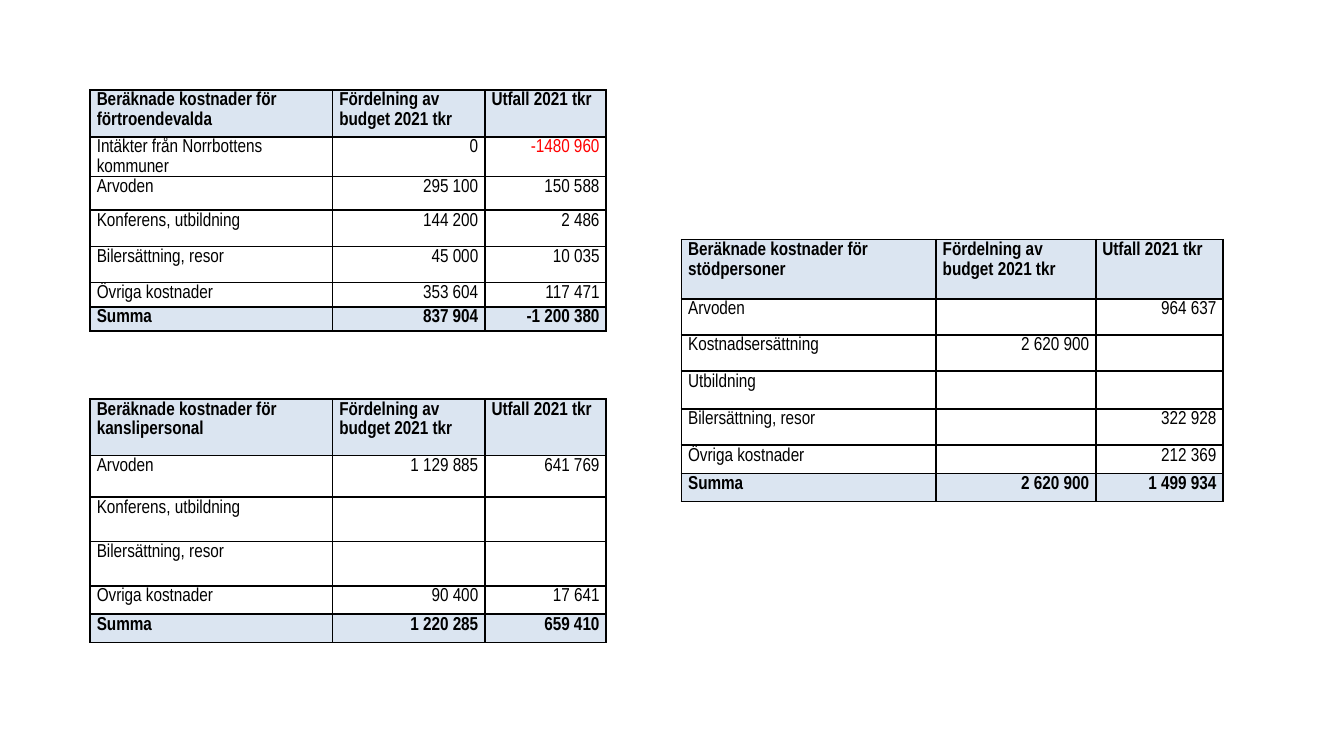
from lxml import etree
from pptx import Presentation
from pptx.dml.color import RGBColor
from pptx.enum.text import PP_ALIGN
from pptx.oxml.ns import qn
from pptx.util import Inches, Pt

LEFT, RIGHT = PP_ALIGN.LEFT, PP_ALIGN.RIGHT
COLORS = {"text": "000000", "line": "000000", "negative": "FF0000", "band": "DBE5F1"}
FONT, SIZE = "Arial Narrow", 10
HARD_SPACE = chr(160)

# 16:9 slide
prs = Presentation()
prs.slide_width = Inches(10)
prs.slide_height = prs.slide_width * 9 // 16
W, H = prs.slide_width, prs.slide_height
s = prs.slides.add_slide(prs.slide_layouts[6])

COLUMN_SHARES = (0.47, 0.295, 0.235)
HEADINGS = ("Fördelning av budget 2021 tkr", "Utfall 2021 tkr")

# Each table: group, left, top and width as slide shares, row heights in inches, rows
TABLES = [
    ("förtroendevalda", 0.067, 0.119, 0.384,
     (0.35, 0.25, 0.25, 0.27, 0.27, 0.18, 0.18), [
         ("Intäkter från Norrbottens kommuner", "0", "-1480 960"),
         ("Arvoden", "295 100", "150 588"),
         ("Konferens, utbildning", "144 200", "2 486"),
         ("Bilersättning, resor", "45 000", "10 035"),
         ("Övriga kostnader", "353 604", "117 471"),
         ("Summa", "837 904", "-1 200 380")]),
    ("kanslipersonal", 0.067, 0.528, 0.384,
     (0.42, 0.31, 0.33, 0.33, 0.21, 0.21), [
         ("Arvoden", "1 129 885", "641 769"),
         ("Konferens, utbildning", "", ""),
         ("Bilersättning, resor", "", ""),
         ("Övriga kostnader", "90 400", "17 641"),
         ("Summa", "1 220 285", "659 410")]),
    ("stödpersoner", 0.507, 0.317, 0.403,
     (0.44, 0.27, 0.27, 0.28, 0.27, 0.21, 0.21), [
         ("Arvoden", "", "964 637"),
         ("Kostnadsersättning", "2 620 900", ""),
         ("Utbildning", "", ""),
         ("Bilersättning, resor", "", "322 928"),
         ("Övriga kostnader", "", "212 369"),
         ("Summa", "2 620 900", "1 499 934")]),
]


def add_borders(cell):
    tcPr = cell._tc.get_or_add_tcPr()
    for side in ("a:lnL", "a:lnR", "a:lnT", "a:lnB"):
        ln = etree.SubElement(tcPr, qn(side), w=str(Pt(1)))
        fill = etree.SubElement(ln, qn("a:solidFill"))
        etree.SubElement(fill, qn("a:srgbClr"), val=COLORS["line"])


def fill_cell(cell, text, align, band, color):
    cell.margin_left = cell.margin_right = Inches(0.05)
    cell.margin_top = cell.margin_bottom = 0
    add_borders(cell)
    if band:
        cell.fill.solid()
        cell.fill.fore_color.rgb = RGBColor.from_string(COLORS["band"])
    else:
        cell.fill.background()

    p = cell.text_frame.paragraphs[0]
    p.alignment, p.line_spacing, p.space_after = align, 1.15, Pt(6)
    if not text:
        # Keep an empty cell from stretching its row
        etree.SubElement(p._p, qn("a:endParaRPr"), sz=str(SIZE * 100))
        return
    r = p.add_run()
    r.text = text
    r.font.name, r.font.size, r.font.bold = FONT, Pt(SIZE), band
    r.font.color.rgb = RGBColor.from_string(COLORS[color])


# Cost tables
for group, left, top, width, heights, costs in TABLES:
    rows = [(f"Beräknade kostnader för {group}", *HEADINGS), *costs]
    frame = s.shapes.add_table(len(rows), len(COLUMN_SHARES), int(left * W), int(top * H),
                               int(width * W), Inches(sum(heights)))
    table = frame.table
    table.first_row = table.horz_banding = False
    for column, share in zip(table.columns, COLUMN_SHARES):
        column.width = int(share * width * W)
    for i, (row, height) in enumerate(zip(rows, heights)):
        table.rows[i].height = Inches(height)
        summa = row[0] == "Summa"
        for j, text in enumerate(row):
            align = RIGHT if i and j else LEFT
            color = "negative" if text.startswith("-") and not summa else "text"
            # Millions are held together by a hard space
            if align == RIGHT and text.count(" ") == 2:
                text = text.replace(" ", HARD_SPACE, 1)
            fill_cell(table.cell(i, j), text, align, i == 0 or summa, color)

prs.save("out.pptx")
